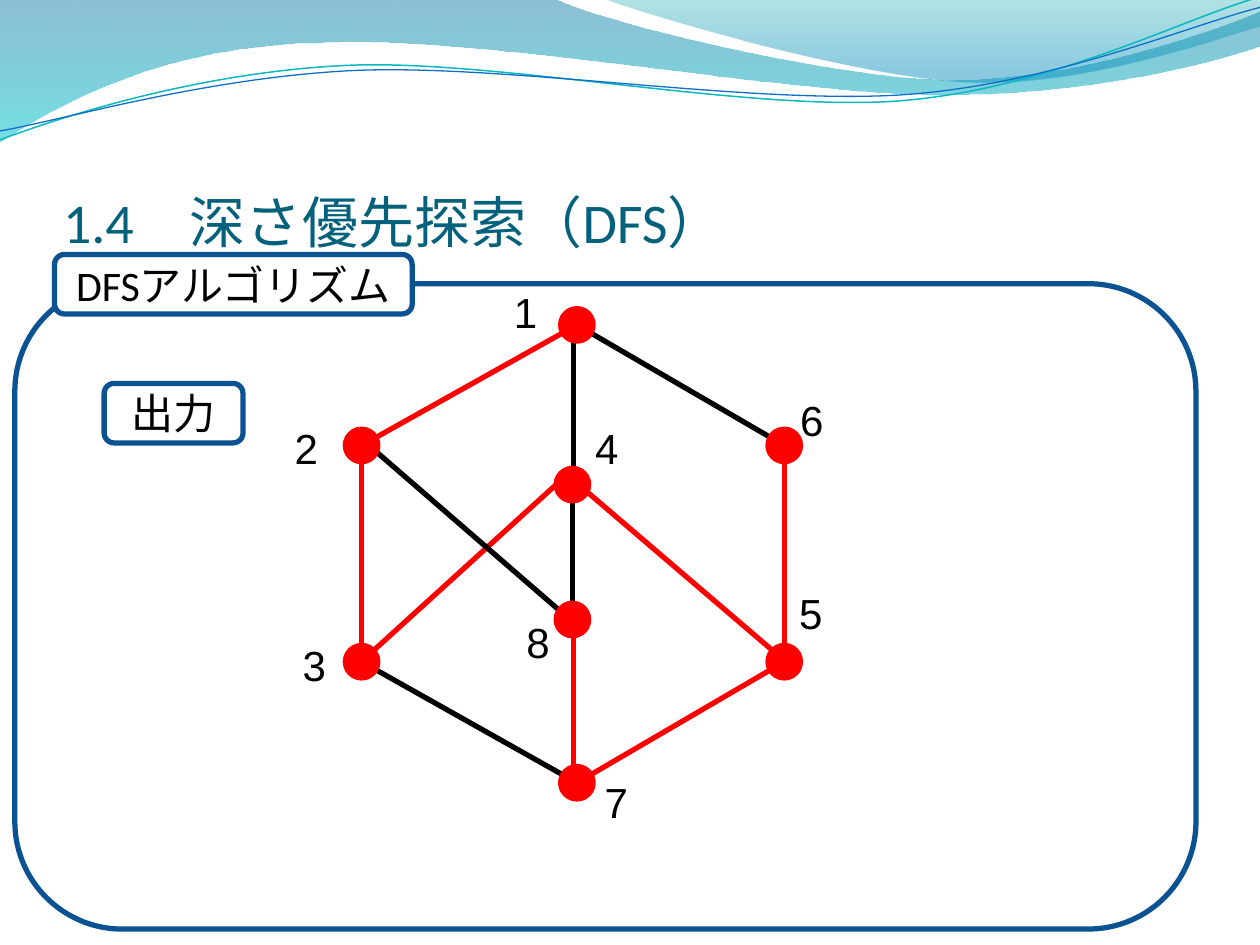
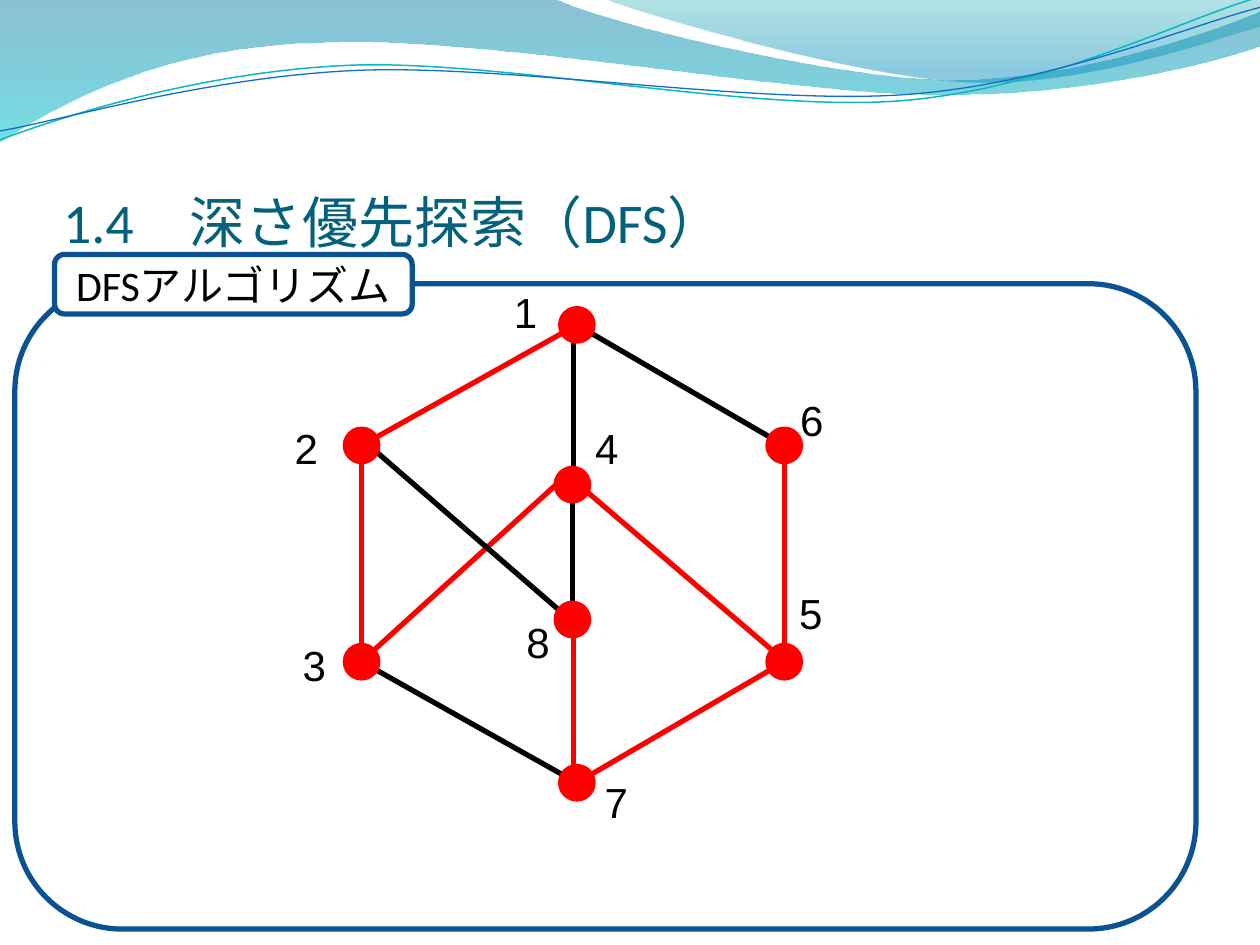
from dataclasses import dataclass

from lxml.etree import SubElement
from pptx import Presentation
from pptx.dml.color import RGBColor
from pptx.enum.shapes import MSO_CONNECTOR, MSO_SHAPE
from pptx.enum.text import MSO_ANCHOR, MSO_AUTO_SIZE, PP_ALIGN
from pptx.oxml.ns import qn
from pptx.util import Cm, Pt

STRAIGHT = MSO_CONNECTOR.STRAIGHT
ROUNDED, OVAL = MSO_SHAPE.ROUNDED_RECTANGLE, MSO_SHAPE.OVAL
MIDDLE, BOTTOM = MSO_ANCHOR.MIDDLE, MSO_ANCHOR.BOTTOM
LEFT, CENTER = PP_ALIGN.LEFT, PP_ALIGN.CENTER
NO_FIT, FIT_SHAPE = MSO_AUTO_SIZE.NONE, MSO_AUTO_SIZE.SHAPE_TO_FIT_TEXT
TITLE_ONLY = 5


@dataclass(frozen=True)
class Theme:
    title: RGBColor = RGBColor(0x04, 0x61, 0x7B)
    border: RGBColor = RGBColor(0x0B, 0x52, 0x92)
    visited: RGBColor = RGBColor(0xFF, 0, 0)
    text: RGBColor = RGBColor(0, 0, 0)
    paper: RGBColor = RGBColor(0xFF, 0xFF, 0xFF)
    teal_line: RGBColor = RGBColor(0x0A, 0xB8, 0xBF)
    blue_line: RGBColor = RGBColor(0x0F, 0x6F, 0xC6)
    # Gradient stops: position, colour, opacity in percent
    wide_band: tuple = ((0, RGBColor(0, 0x74, 0xA1), 45),
                        (1, RGBColor(0, 0xC6, 0xCF), 55))
    right_band: tuple = ((0, RGBColor(0, 0xA1, 0xA9), 30),
                         (0.8, RGBColor(0, 0x8B, 0xBF), 45))
    font: str = "Calibri"
    label_font: str = "Arial"
    title_size: int = 32
    text_size: int = 24
    stroke: float = 3
    node_stroke: float = 2


THEME = Theme()

# Wave outlines in cm: two numbers are a line, six are a cubic curve
WIDE_BAND = [(0, -0.03), (11.18, -0.03),
             (12.09, 0.43, 16.87, 1.6, 19.25, 1.6),
             (21.67, 1.6, 24.33, 0.66, 25.4, 0.23), (25.43, 0.91),
             (24.97, 1.12, 22.1, 1.93, 18.95, 1.91),
             (15.8, 1.91, 9.7, 0.71, 6.53, 0.86),
             (3.28, 0.89, 1.17, 2.11, -0.03, 2.87), (0, -0.03)]
RIGHT_BAND = [(12.17, -0.03), (12.93, 0.28, 17.32, 1.57, 19.53, 1.65),
              (21.77, 1.75, 24.41, 0.81, 25.4, 0.53), (25.4, 0), (12.17, -0.03)]
# The two thin waves are drawn level and then tilted
WAVE_TILT = -2.7
TEAL_WAVE = [(-0.05, 2.22), (1.19, 1.82, 4.02, 1.04, 7.05, 1.05),
             (10.05, 1.07, 15.02, 2.37, 18.08, 2.29),
             (21.13, 2.2, 23.87, 0.91, 25.41, 0.55)]
BLUE_WAVE = [(-0.04, 2.04), (1.16, 1.9, 4.18, 1.15, 7.2, 1.16),
             (10.25, 1.18, 15.13, 2.23, 18.18, 2.17),
             (21.21, 2.1, 23.93, 1.06, 25.45, 0.75)]

# Graph: vertex centres, label corners and edges in cm
NODE_SIZE = 0.69
NODES = {6: (15.81, 8.98), 5: (15.81, 13.34), 1: (11.63, 6.55), 2: (7.29, 8.98),
         3: (7.29, 13.34), 4: (11.54, 9.77), 7: (11.63, 15.78), 8: (11.54, 12.49)}
LABELS = {1: (10.11, 5.66), 2: (5.69, 8.4), 3: (5.85, 12.76), 7: (11.94, 15.52),
          5: (15.86, 11.71), 6: (15.88, 7.82), 4: (11.75, 8.39), 8: (10.36, 12.31)}
TREE_EDGES = [((11.56, 12.52), (11.56, 15.6)),
              ((15.57, 13.11), (11.56, 9.68)),
              ((11.2, 9.78), (7.37, 13.26)),
              (NODES[2], NODES[1]), (NODES[2], (7.29, 12.98)),
              (NODES[7], NODES[5]), (NODES[6], NODES[5])]
OTHER_EDGES = [(NODES[1], NODES[6]), (NODES[3], NODES[7]),
               ((11.54, 9.42), (11.54, 12.5)),
               ((11.56, 6.63), (11.56, 9.7)),
               ((11.79, 12.75), (7.37, 8.92))]


def set_line(shape, color, width):
    shape.line.color.rgb = color
    shape.line.width = Pt(width)


def set_fill(shape, color):
    shape.fill.solid()
    shape.fill.fore_color.rgb = color


def write(text_frame, text, size, color, font=THEME.font, align=LEFT):
    paragraph = text_frame.paragraphs[0]
    paragraph.alignment = align
    run = paragraph.add_run()
    run.text = text
    run.font.size = Pt(size)
    run.font.name = font
    run.font.color.rgb = color


def add_outline(slide, outline, closed):
    """Lay all points as lines, then join each curve's three points."""
    points = [(Cm(segment[i]), Cm(segment[i + 1]))
              for segment in outline for i in range(0, len(segment), 2)]
    builder = slide.shapes.build_freeform(*points[0])
    builder.add_line_segments(points[1:], close=closed)
    shape = builder.convert_to_shape()
    shape.shadow.inherit = False
    lines = iter(list(shape.element.iter(qn("a:lnTo"))))
    for segment in outline[1:]:
        first = next(lines)
        if len(segment) == 6:
            curve = first.makeelement(qn("a:cubicBezTo"))
            first.addprevious(curve)
            for line in (first, next(lines), next(lines)):
                curve.append(line[0])
                line.getparent().remove(line)
    return shape


def add_band(slide, outline, stops):
    shape = add_outline(slide, outline, True)
    shape.line.fill.background()
    shape.fill.gradient()
    shape.fill.gradient_angle = 270
    for stop, (position, color, _) in zip(shape.fill.gradient_stops, stops):
        stop.position = position
        stop.color.rgb = color
    for color_element, (_, _, opacity) in zip(shape.element.iter(qn("a:srgbClr")), stops):
        SubElement(color_element, qn("a:alpha")).set("val", str(opacity * 1000))
    return shape


def add_wave(slide, outline, color, width):
    shape = add_outline(slide, outline, False)
    shape.rotation = WAVE_TILT
    shape.fill.background()
    set_line(shape, color, width)
    return shape


def decorate_layout(layout, slide):
    """Draw the waves once and move them behind the layout's title."""
    for placeholder in list(layout.placeholders)[1:]:
        layout.shapes.element.remove(placeholder.element)
    waves = [add_band(slide, WIDE_BAND, THEME.wide_band),
             add_band(slide, RIGHT_BAND, THEME.right_band),
             add_wave(slide, TEAL_WAVE, THEME.teal_line, 0.85),
             add_wave(slide, BLUE_WAVE, THEME.blue_line, 0.75)]
    for index, wave in enumerate(waves, start=2):
        layout.shapes.element.insert(index, wave.element)


def set_title(slide, text):
    title = slide.shapes.title
    title.left, title.top, title.width, title.height = map(Cm, (1.27, 1.96, 22.86, 3.18))
    frame = title.text_frame
    frame.auto_size = NO_FIT
    frame.vertical_anchor = BOTTOM
    frame.margin_left = frame.margin_right = frame.margin_bottom = 0
    frame.margin_top = Cm(0.13)
    write(frame, text, THEME.title_size, THEME.title)


def add_rounded_box(slide, left, top, width, height, text=None):
    box = slide.shapes.add_shape(ROUNDED, Cm(left), Cm(top), Cm(width), Cm(height))
    box.shadow.inherit = False
    set_line(box, THEME.border, THEME.stroke)
    if text is None:
        box.fill.background()
        return
    set_fill(box, THEME.paper)
    box.text_frame.word_wrap = True
    box.text_frame.vertical_anchor = MIDDLE
    write(box.text_frame, text, THEME.text_size, THEME.text, align=CENTER)


def add_edge(group, start, end, color):
    edge = group.shapes.add_connector(STRAIGHT, *map(Cm, start + end))
    set_line(edge, color, THEME.stroke)
    SubElement(edge.element.spPr, qn("a:effectLst"))


def add_node(group, x, y):
    half = NODE_SIZE / 2
    node = group.shapes.add_shape(OVAL, Cm(x - half), Cm(y - half), Cm(NODE_SIZE), Cm(NODE_SIZE))
    node.shadow.inherit = False
    set_fill(node, THEME.visited)
    set_line(node, THEME.visited, THEME.node_stroke)


def add_label(slide, left, top, text):
    frame = slide.shapes.add_textbox(Cm(left), Cm(top), Cm(0.99), Cm(1.28)).text_frame
    frame.word_wrap = False
    frame.auto_size = FIT_SHAPE
    write(frame, text, THEME.text_size, THEME.text, THEME.label_font)


def add_graph(slide):
    group = slide.shapes.add_group_shape()
    for edges, color in ((TREE_EDGES, THEME.visited), (OTHER_EDGES, THEME.text)):
        for start, end in edges:
            add_edge(group, start, end, color)
    for center in NODES.values():
        add_node(group, *center)
    for number, corner in LABELS.items():
        add_label(slide, *corner, str(number))


def main():
    presentation = Presentation()
    presentation.slide_width, presentation.slide_height = Cm(25.4), Cm(19.05)
    layout = presentation.slide_layouts[TITLE_ONLY]
    slides = [presentation.slides.add_slide(layout) for _ in range(2)]
    decorate_layout(layout, slides[0])

    # Both slides show the finished search tree
    for slide in slides:
        set_title(slide, "1.4　深さ優先探索（DFS）")
        add_rounded_box(slide, 0.3, 5.72, 23.81, 13.01)
        add_rounded_box(slide, 1.1, 5.13, 7.21, 1.2, "DFSアルゴリズム")
        add_graph(slide)

    # Only the first slide marks it as the output
    add_rounded_box(slides[0], 2.1, 7.73, 2.8, 1.2, "出力")
    presentation.save("out.pptx")


if __name__ == "__main__":
    main()
